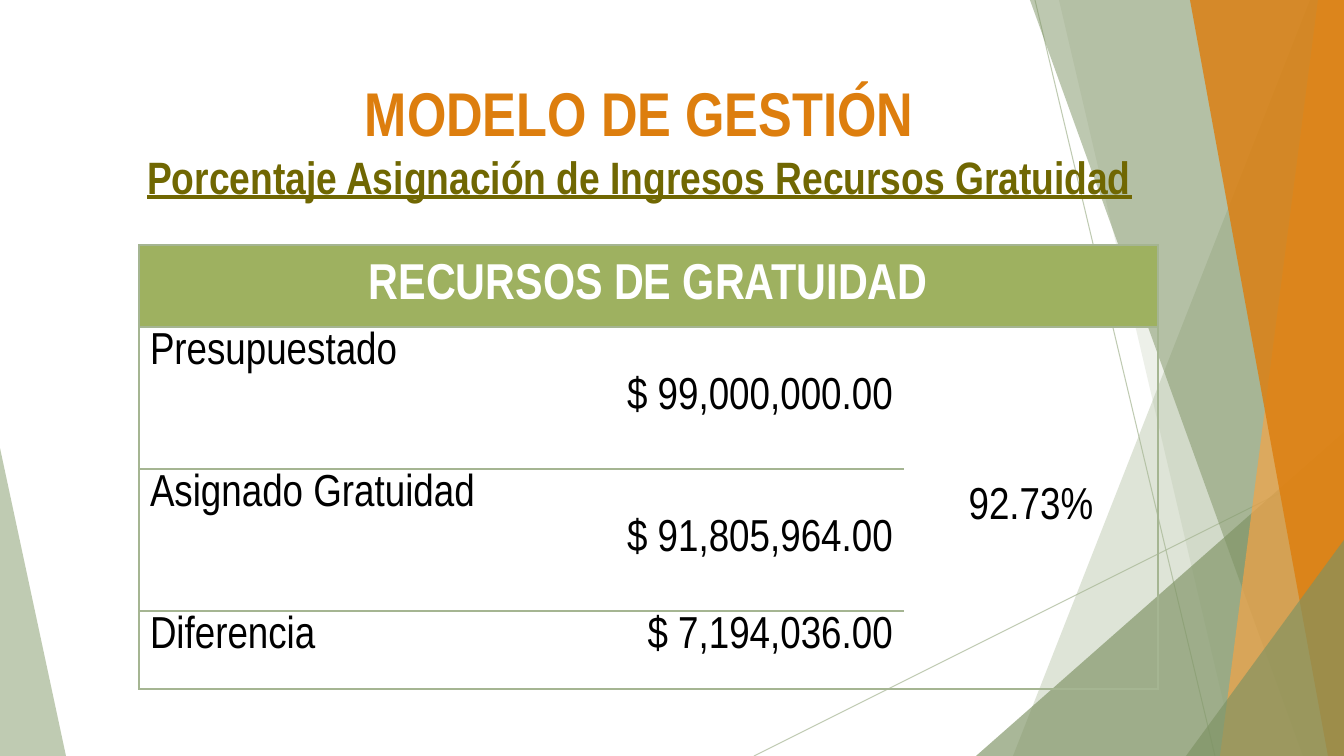
from lxml import etree
from pptx import Presentation
from pptx import util as u
from pptx.dml import color as dml
from pptx.enum import shapes, text
from pptx.oxml import ns

W, H = 1344, 756
SCALE = 12192000 / W
FONT = "Arial Narrow"
SAGE, MOSS, ORANGE, AMBER = "A5B592", "7D9263", "DD7E0E", "F3A447"
LEFT, CENTER, RIGHT = text.PP_ALIGN.LEFT, text.PP_ALIGN.CENTER, text.PP_ALIGN.RIGHT
TOP, MIDDLE = text.MSO_ANCHOR.TOP, text.MSO_ANCHOR.MIDDLE


def px(n):
    return u.Emu(round(n * SCALE))


def rgb(value):
    return dml.RGBColor.from_string(value)


def paint(fill, color, opacity=100):
    """Give a fill one solid colour, with opacity in percent."""
    fill.solid()
    fill.fore_color.rgb = rgb(color)
    if opacity < 100:
        clr = fill._xPr.find(".//" + ns.qn("a:srgbClr"))
        etree.SubElement(clr, ns.qn("a:alpha"), val=str(opacity * 1000))


def add_facet(s, points, color, opacity):
    builder = s.shapes.build_freeform(*points[0], scale=SCALE)
    builder.add_line_segments(points[1:], close=True)
    sp = builder.convert_to_shape()
    sp.shadow.inherit = False
    paint(sp.fill, color, opacity)
    sp.line.fill.background()


def add_band(s, top_x, bottom_x, color, opacity):
    """Add a facet between a slanted edge and the right side of the slide."""
    add_facet(s, [(top_x, 0), (bottom_x, H), (W, H), (W, 0)], color, opacity)


def add_corner(s, x, y, color, opacity):
    """Add a triangle in the bottom right corner."""
    add_facet(s, [(x, H), (W, y), (W, H)], color, opacity)


def add_hairline(s, x1, y1, x2, y2):
    line = s.shapes.add_connector(
        shapes.MSO_CONNECTOR.STRAIGHT, px(x1), px(y1), px(x2), px(y2))
    line.line.width = u.Pt(0.75)
    paint(line.line.fill, SAGE, 70)
    etree.SubElement(line._element.spPr, ns.qn("a:effectLst"))


def write(p, content, size, color="000000", align=LEFT, bold=False, underline=False):
    p.alignment = align
    r = p.add_run()
    r.text = content
    font = r.font
    font.name, font.size, font.bold = FONT, u.Pt(size), bold
    font.underline = underline
    font.color.rgb = rgb(color)


def add_background(s):
    add_facet(s, [(0, 448), (66, H), (0, H)], SAGE, 70)
    add_hairline(s, 754, H, W, 461)
    add_hairline(s, 1035, 0, 1215, H)
    add_band(s, 1310, 1013, SAGE, 36)
    add_band(s, 1059, 1236, SAGE, 20)
    add_corner(s, 976, 432, MOSS, 66)
    add_band(s, 1030, 1303, MOSS, 50)
    add_band(s, 1318, 1220, AMBER, 70)
    add_band(s, 1190, 1328, ORANGE, 82)
    add_corner(s, 1186, 540, MOSS, 66)


def add_title(s):
    tf = s.shapes.add_textbox(px(121), px(70), px(1037), px(124)).text_frame
    tf.word_wrap = True
    write(tf.paragraphs[0], "MODELO DE GESTIÓN", 44.1, ORANGE, CENTER, bold=True)
    write(tf.add_paragraph(), "Porcentaje Asignación de Ingresos Recursos Gratuidad",
          32.4, "706702", CENTER, bold=True, underline=True)


def set_borders(cell, sides):
    """Draw the named sides (of L, R, T, B) and clear the others."""
    tc_pr = cell._tc.get_or_add_tcPr()
    for side in "LRTB":
        ln = etree.SubElement(tc_pr, ns.qn("a:ln" + side), w=str(u.Pt(1)))
        if side in sides:
            fill = etree.SubElement(ln, ns.qn("a:solidFill"))
            etree.SubElement(fill, ns.qn("a:srgbClr"), val=SAGE)
        else:
            etree.SubElement(ln, ns.qn("a:noFill"))


def cell_sides(row, col):
    """Return the ruled sides: the frame and the rows left of the percentage."""
    sides = "L" if col == 0 else ""
    if row == 0 or col == 2:
        sides += "R"
    if col < 2 or row < 2:
        sides += "T"
    if col < 2 or row != 2:
        sides += "B"
    return sides


def fill_cell(cell, content, anchor=TOP, size=32, **style):
    cell.vertical_anchor = anchor
    write(cell.text_frame.paragraphs[0], content, size, **style)


def add_resources_table(s):
    widths, heights = [477, 288, 254], [82, 142, 142, 78]
    frame = s.shapes.add_table(len(heights), len(widths), px(139), px(245),
                               px(sum(widths)), px(sum(heights)))
    table = frame.table
    table.horz_banding = False
    for col, width in zip(table.columns, widths):
        col.width = px(width)
    for row, height in zip(table.rows, heights):
        row.height = px(height)
    for r in range(len(heights)):
        for c in range(len(widths)):
            cell = table.cell(r, c)
            cell.margin_left = cell.margin_right = px(11)
            cell.margin_top = cell.margin_bottom = px(5)
            set_borders(cell, cell_sides(r, c))
            if r == 0:
                paint(cell.fill, "9EB160")
            else:
                cell.fill.background()
    table.cell(0, 0).merge(table.cell(0, 2))
    table.cell(1, 2).merge(table.cell(3, 2))

    fill_cell(table.cell(0, 0), "RECURSOS DE GRATUIDAD", MIDDLE, 36,
              color="FFFFFF", align=CENTER, bold=True)
    amounts = [("Presupuestado", "$ 99,000,000.00", MIDDLE),
               ("Asignado Gratuidad", "$ 91,805,964.00", MIDDLE),
               ("Diferencia", "$ 7,194,036.00", TOP)]
    for r, (label, amount, anchor) in enumerate(amounts, 1):
        fill_cell(table.cell(r, 0), label)
        fill_cell(table.cell(r, 1), amount, anchor, align=RIGHT)
    fill_cell(table.cell(1, 2), "92.73%", MIDDLE, align=CENTER)


def main():
    prs = Presentation()
    prs.slide_width, prs.slide_height = px(W), px(H)
    s = prs.slides.add_slide(prs.slide_layouts[6])
    add_background(s)
    add_title(s)
    add_resources_table(s)
    prs.save("out.pptx")


if __name__ == "__main__":
    main()
